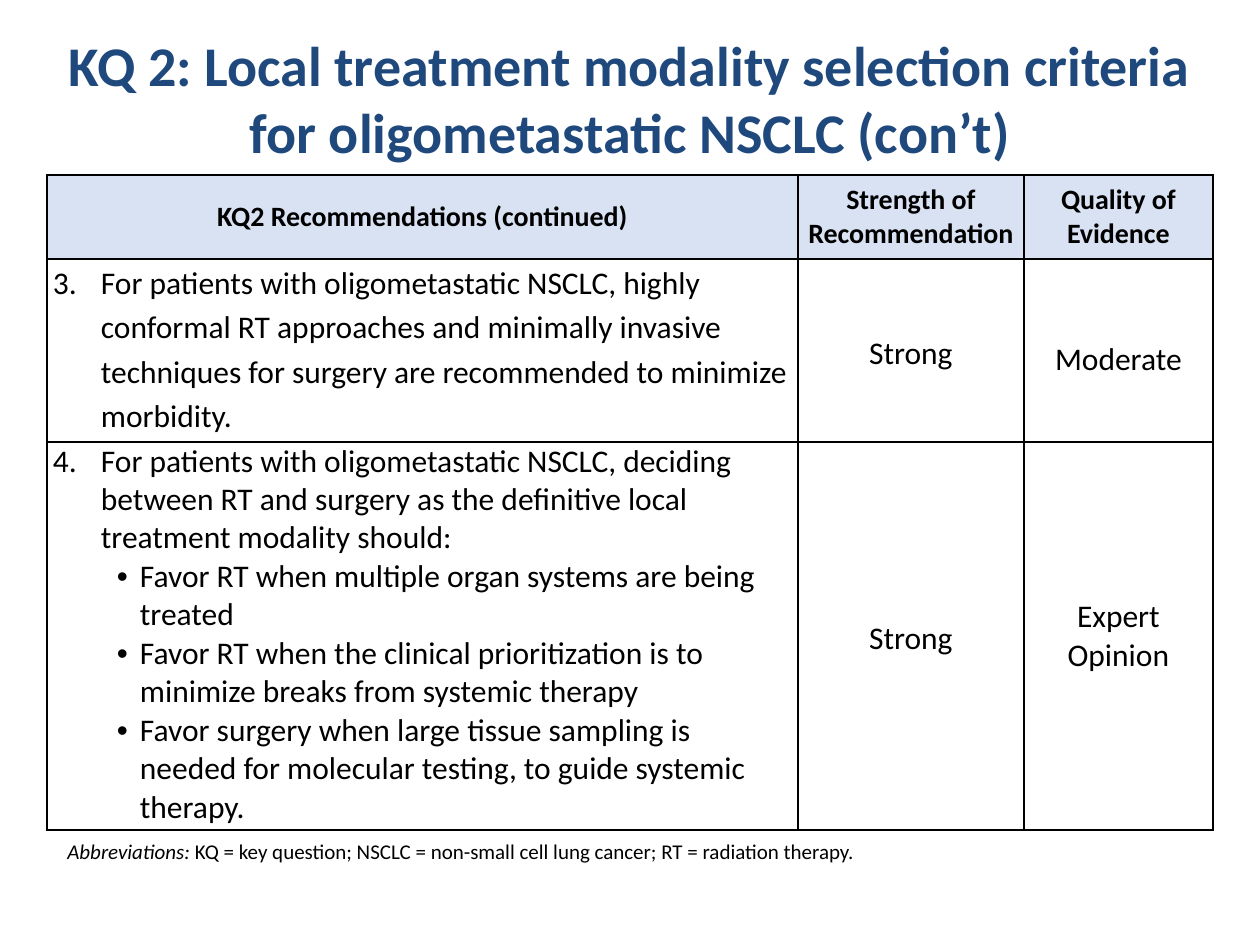
from dataclasses import dataclass

import lxml.etree
import pptx
import pptx.dml.color
import pptx.enum.text
import pptx.oxml.ns
import pptx.util

EMU_PER_PX = 914400 / 126
FONT = "Calibri"
COLORS = {"title": "1F497D", "text": "000000", "header": "D9E2F3", "border": "000000"}
LEFT = pptx.enum.text.PP_ALIGN.LEFT
CENTER = pptx.enum.text.PP_ALIGN.CENTER
TOP = pptx.enum.text.MSO_ANCHOR.TOP
MIDDLE = pptx.enum.text.MSO_ANCHOR.MIDDLE

COLUMN_WIDTHS = (751, 226, 189)
ROW_HEIGHTS = (84, 183, 388)


@dataclass(frozen=True)
class Line:
    text: str
    size: int = 18
    bold: bool = False
    align: int = CENTER
    spacing: float = 1.0
    number: int = 0
    bullet: bool = False
    level: int = 0


@dataclass(frozen=True)
class CellContent:
    lines: tuple[Line, ...]
    anchor: int = MIDDLE
    fill: str = ""


def header(text: str) -> CellContent:
    return CellContent((Line(text, size=16, bold=True),), fill="header")


def rating(text: str, spacing: float = 1.0) -> CellContent:
    return CellContent((Line(text, spacing=spacing),))


def bullet(text: str, level: int = 1) -> Line:
    return Line(text, align=LEFT, bullet=True, level=level)


ROWS = (
    (
        header("KQ2 Recommendations (continued)"),
        header("Strength of Recommendation"),
        header("Quality of Evidence"),
    ),
    (
        CellContent((
            Line("For patients with oligometastatic NSCLC, highly conformal RT approaches and "
                 "minimally invasive techniques for surgery are recommended to minimize morbidity.",
                 align=LEFT, spacing=1.15, number=3),
        ), anchor=TOP),
        rating("Strong", 1.15),
        rating("Moderate", 1.5),
    ),
    (
        CellContent((
            Line("For patients with oligometastatic NSCLC, deciding between RT and surgery as "
                 "the definitive local treatment modality should:", align=LEFT, number=4),
            bullet("Favor RT when multiple organ systems are being treated", level=0),
            bullet("Favor RT when the clinical prioritization is to minimize breaks from "
                   "systemic therapy"),
            bullet("Favor surgery when large tissue sampling is needed for molecular testing, "
                   "to guide systemic therapy."),
        ), anchor=TOP),
        rating("Strong", 1.15),
        rating("Expert Opinion"),
    ),
)


def px(length: int) -> int:
    return round(length * EMU_PER_PX)


def add_element(parent, tag: str, **attributes: str):
    return lxml.etree.SubElement(parent, pptx.oxml.ns.qn(tag), attributes)


def format_run(run, size: int, color: str, bold: bool = False, italic: bool = False) -> None:
    run.font.name = FONT
    run.font.size = pptx.util.Pt(size)
    run.font.bold = bold
    run.font.italic = italic
    run.font.color.rgb = pptx.dml.color.RGBColor.from_string(COLORS[color])


def set_indent(paragraph, margin: int, indent: int):
    properties = paragraph._p.get_or_add_pPr()
    properties.set("marL", str(px(margin)))
    properties.set("indent", str(px(indent)))
    return properties


def write_lines(text_frame, lines: tuple[Line, ...]) -> None:
    text_frame.text = "\n".join(line.text for line in lines)
    for paragraph, line in zip(text_frame.paragraphs, lines):
        paragraph.alignment = line.align
        paragraph.level = line.level
        paragraph.line_spacing = line.spacing
        if line.number:
            properties = set_indent(paragraph, 48, -48)
            add_element(properties, "a:buFont", typeface="+mj-lt")
            add_element(properties, "a:buAutoNum", type="arabicPeriod", startAt=str(line.number))
        elif line.bullet:
            properties = set_indent(paragraph, 87, -23)
            add_element(properties, "a:buFont", typeface="Arial")
            add_element(properties, "a:buChar", char="•")
        format_run(paragraph.runs[0], line.size, "text", line.bold)


def draw_cell(cell, content: CellContent) -> None:
    cell.margin_left = cell.margin_right = px(6)
    cell.margin_top = cell.margin_bottom = 0
    cell.vertical_anchor = content.anchor
    properties = cell._tc.get_or_add_tcPr()
    for side in ("a:lnL", "a:lnR", "a:lnT", "a:lnB"):
        border = add_element(properties, side, w=str(pptx.util.Pt(1)))
        fill = add_element(border, "a:solidFill")
        add_element(fill, "a:srgbClr", val=COLORS["border"])
    if content.fill:
        cell.fill.solid()
        cell.fill.fore_color.rgb = pptx.dml.color.RGBColor.from_string(COLORS[content.fill])
    else:
        cell.fill.background()
    write_lines(cell.text_frame, content.lines)


def draw_table(slide, left: int, top: int) -> None:
    frame = slide.shapes.add_table(
        len(ROW_HEIGHTS), len(COLUMN_WIDTHS),
        px(left), px(top), px(sum(COLUMN_WIDTHS)), px(sum(ROW_HEIGHTS)))
    table = frame.table
    table.first_row = table.horz_banding = False
    for column, width in zip(table.columns, COLUMN_WIDTHS):
        column.width = px(width)
    for row, height, contents in zip(table.rows, ROW_HEIGHTS, ROWS):
        row.height = px(height)
        for cell, content in zip(row.cells, contents):
            draw_cell(cell, content)


def add_text_box(slide, left: int, top: int, width: int, height: int):
    shape = slide.shapes.add_textbox(px(left), px(top), px(width), px(height))
    shape.text_frame.word_wrap = True
    return shape.text_frame.paragraphs[0]


def main() -> None:
    presentation = pptx.Presentation()
    presentation.slide_width = px(1260)
    presentation.slide_height = px(945)
    slide = presentation.slides.add_slide(presentation.slide_layouts[6])

    title = add_text_box(slide, 47, 24, 1166, 73)
    title.text = "KQ 2: Local treatment modality selection criteria for oligometastatic NSCLC (con’t)"
    title.alignment = CENTER
    format_run(title.runs[0], 32, "title", bold=True)

    draw_table(slide, 47, 175)

    abbreviations = add_text_box(slide, 47, 832, 1041, 38)
    set_indent(abbreviations, 8, 0)
    for text, italic in (
        ("Abbreviations:", True),
        (" KQ = key question; NSCLC = non-small cell lung cancer; RT = radiation therapy.", False),
    ):
        run = abbreviations.add_run()
        run.text = text
        format_run(run, 12, "text", italic=italic)

    presentation.save("out.pptx")


if __name__ == "__main__":
    main()
